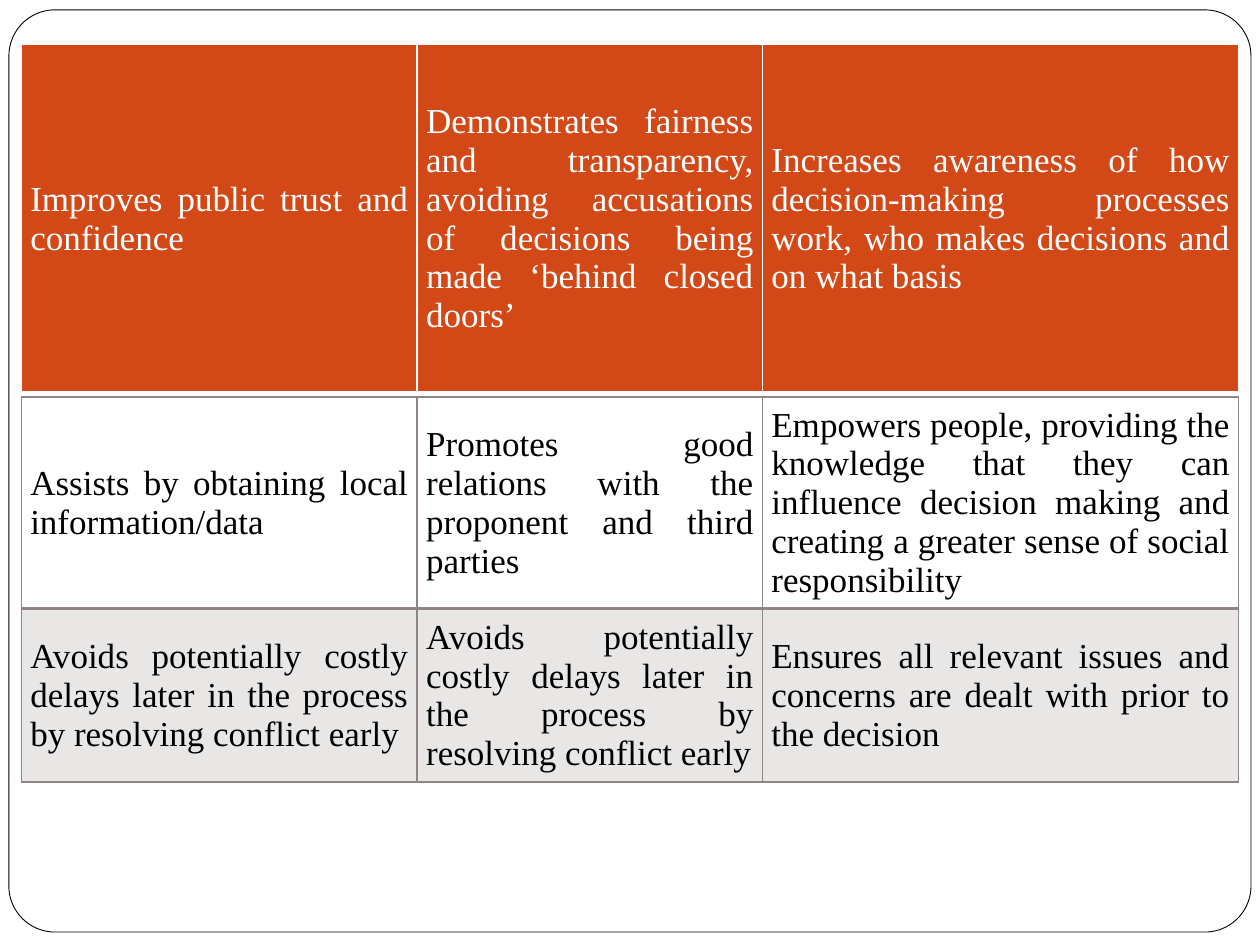
from lxml.etree import SubElement
from pptx import Presentation
from pptx.dml.color import RGBColor
from pptx.enum.shapes import MSO_SHAPE
from pptx.enum.text import MSO_ANCHOR, PP_ALIGN
from pptx.oxml.ns import qn
from pptx.util import Cm, Pt

COLORS = {
    "white": "FFFFFF",
    "black": "000000",
    "orange": "D34817",
    "taupe": "918485",
}
FONT = "Times New Roman"
COLUMN_WIDTHS = [7.98, 6.96, 9.6]
TABLE_LEFT = 0.43
CELL_MARGIN = Cm(0.18)


def set_borders(cell, color, bottom_width):
    """Draw 1 pt borders around the cell, with its own width at the bottom."""
    properties = cell._tc.get_or_add_tcPr()
    for side, width in (("L", 1), ("R", 1), ("T", 1), ("B", bottom_width)):
        line = SubElement(properties, qn(f"a:ln{side}"), w=str(Pt(width)))
        fill = SubElement(line, qn("a:solidFill"))
        SubElement(fill, qn("a:srgbClr"), val=COLORS[color])


presentation = Presentation()
presentation.slide_width = Cm(25.4)
presentation.slide_height = Cm(19.05)
slide = presentation.slides.add_slide(presentation.slide_layouts[6])

frame = slide.shapes.add_shape(
    MSO_SHAPE.ROUNDED_RECTANGLE, Cm(0.18), Cm(0.2), Cm(25.04), Cm(18.59)
)
frame.adjustments[0] = 0.05
frame.shadow.inherit = False
frame.fill.solid()
frame.fill.fore_color.rgb = RGBColor.from_string(COLORS["white"])
frame.line.color.rgb = RGBColor.from_string(COLORS["black"])
frame.line.width = Pt(0.5)

# Each row: height, fill, fill opacity in percent, bottom border width, texts
body_rows = [
    (3.63, None, 100, 2, [
        "Assists by obtaining local information/data",
        "Promotes good relations with the proponent and third parties",
        "Empowers people, providing the knowledge that they can influence "
        "decision making and creating a greater sense of social responsibility",
    ]),
    (2.82, "taupe", 20, 1, [
        "Avoids potentially costly delays later in the process by resolving conflict early",
        "Avoids potentially costly delays later in the process by resolving conflict early",
        "Ensures all relevant issues and concerns are dealt with prior to the decision",
    ]),
]
header_rows = [
    (7.04, "orange", 100, 3, [
        "Improves public trust and confidence",
        "Demonstrates fairness and transparency, avoiding accusations of "
        "decisions being made ‘behind closed doors’",
        "Increases awareness of how decision-making processes work, "
        "who makes decisions and on what basis",
    ]),
]

# Each table: top, text color, border color, rows
tables = [
    (8, "black", "taupe", body_rows),
    (0.89, "white", "white", header_rows),
]

for top, text_color, border_color, rows in tables:
    table = slide.shapes.add_table(
        len(rows), len(COLUMN_WIDTHS), Cm(TABLE_LEFT), Cm(top),
        Cm(sum(COLUMN_WIDTHS)), Cm(sum(row[0] for row in rows)),
    ).table
    table.first_row = False
    table.horz_banding = False
    for column, width in zip(table.columns, COLUMN_WIDTHS):
        column.width = Cm(width)

    for row, (height, fill, opacity, bottom_width, texts) in zip(table.rows, rows):
        row.height = Cm(height)
        for cell, text in zip(row.cells, texts):
            set_borders(cell, border_color, bottom_width)
            if fill:
                cell.fill.solid()
                cell.fill.fore_color.rgb = RGBColor.from_string(COLORS[fill])
            else:
                cell.fill.background()
            if opacity < 100:
                fill_color = cell._tc.tcPr.find(f"{qn('a:solidFill')}/{qn('a:srgbClr')}")
                SubElement(fill_color, qn("a:alpha"), val=str(opacity * 1000))

            cell.vertical_anchor = MSO_ANCHOR.MIDDLE
            cell.margin_left = cell.margin_right = CELL_MARGIN
            cell.margin_top = cell.margin_bottom = CELL_MARGIN
            cell.text_frame.text = text
            paragraph = cell.text_frame.paragraphs[0]
            paragraph.alignment = PP_ALIGN.JUSTIFY
            font = paragraph.runs[0].font
            font.name = FONT
            font.size = Pt(20)
            font.color.rgb = RGBColor.from_string(COLORS[text_color])

presentation.save("out.pptx")
